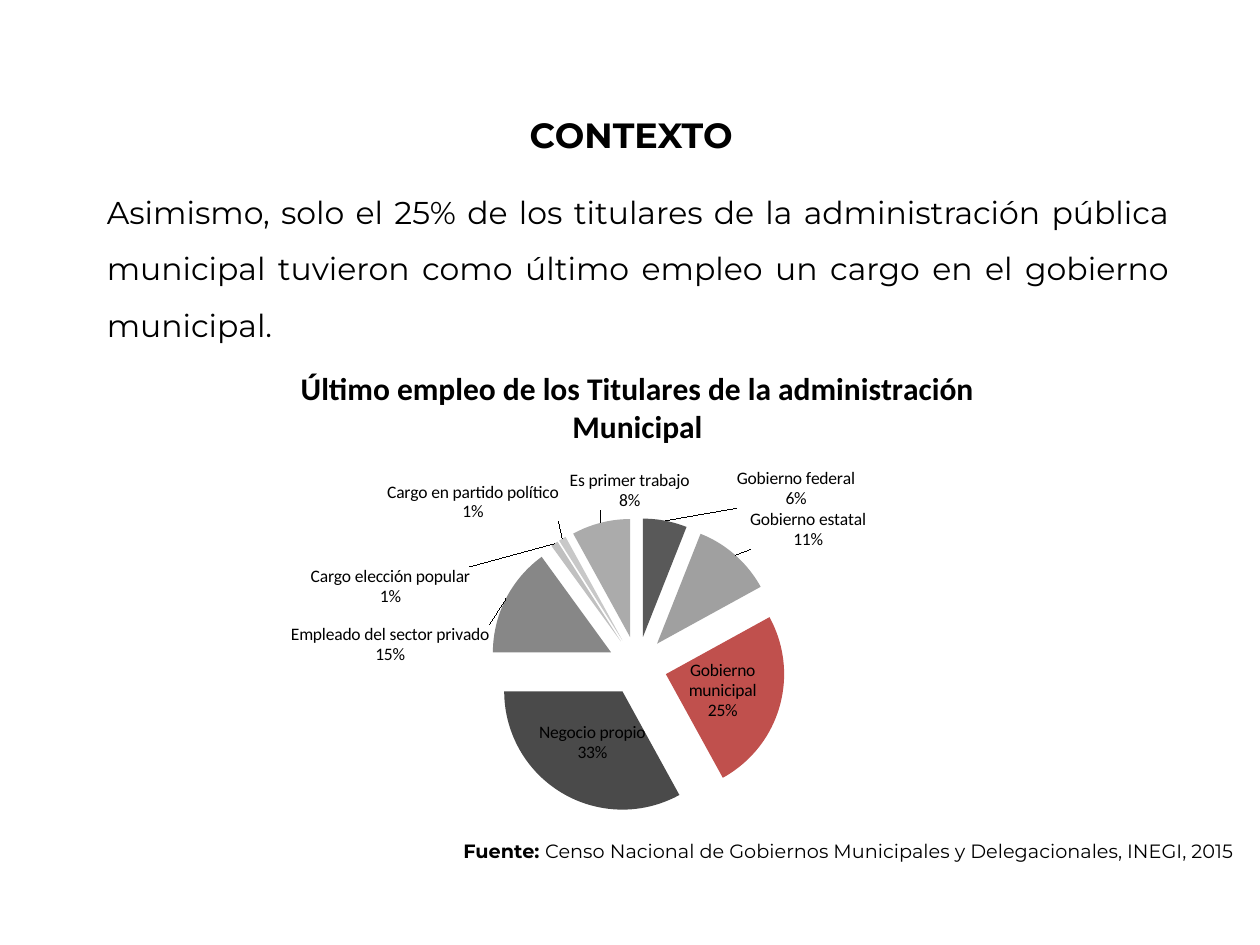
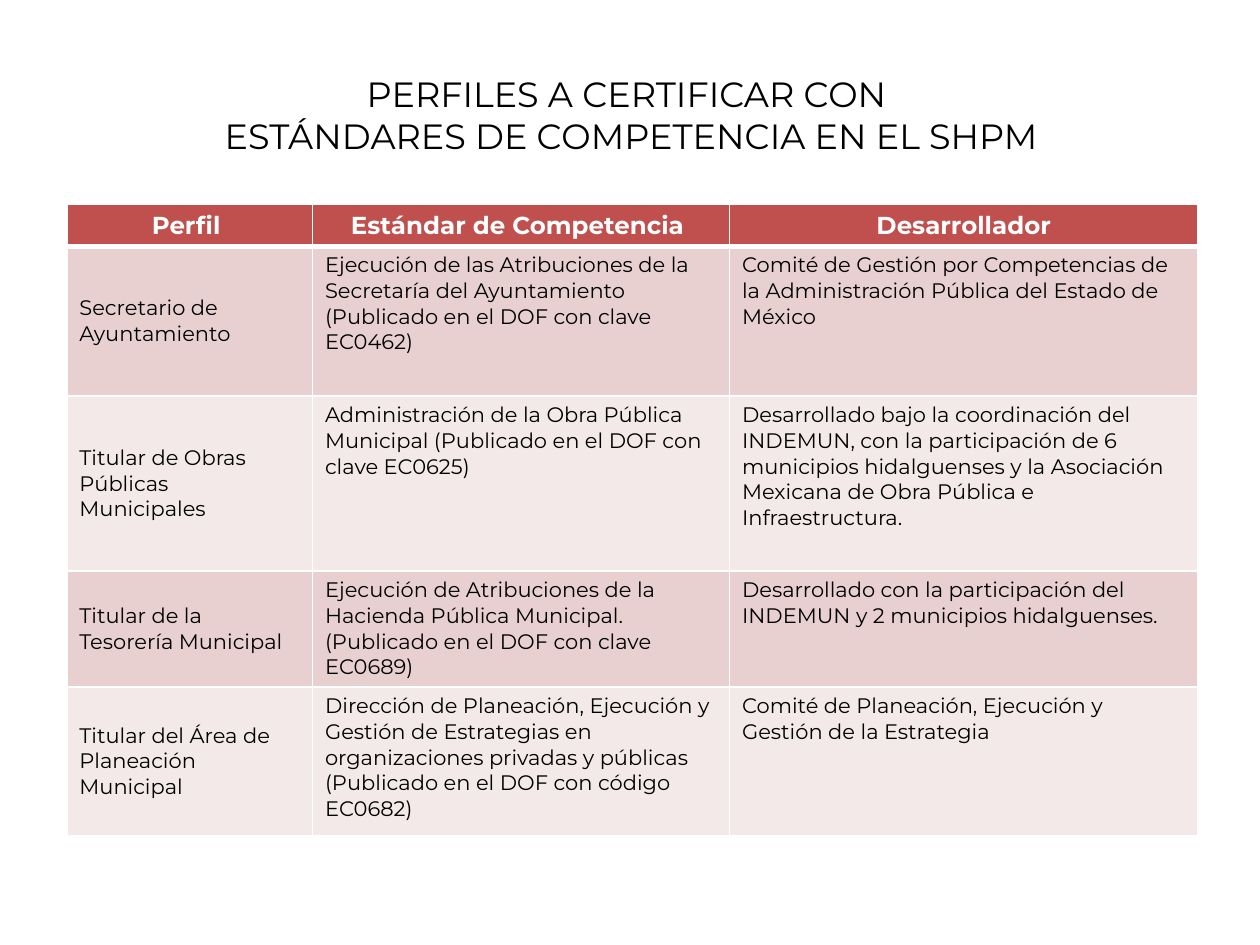
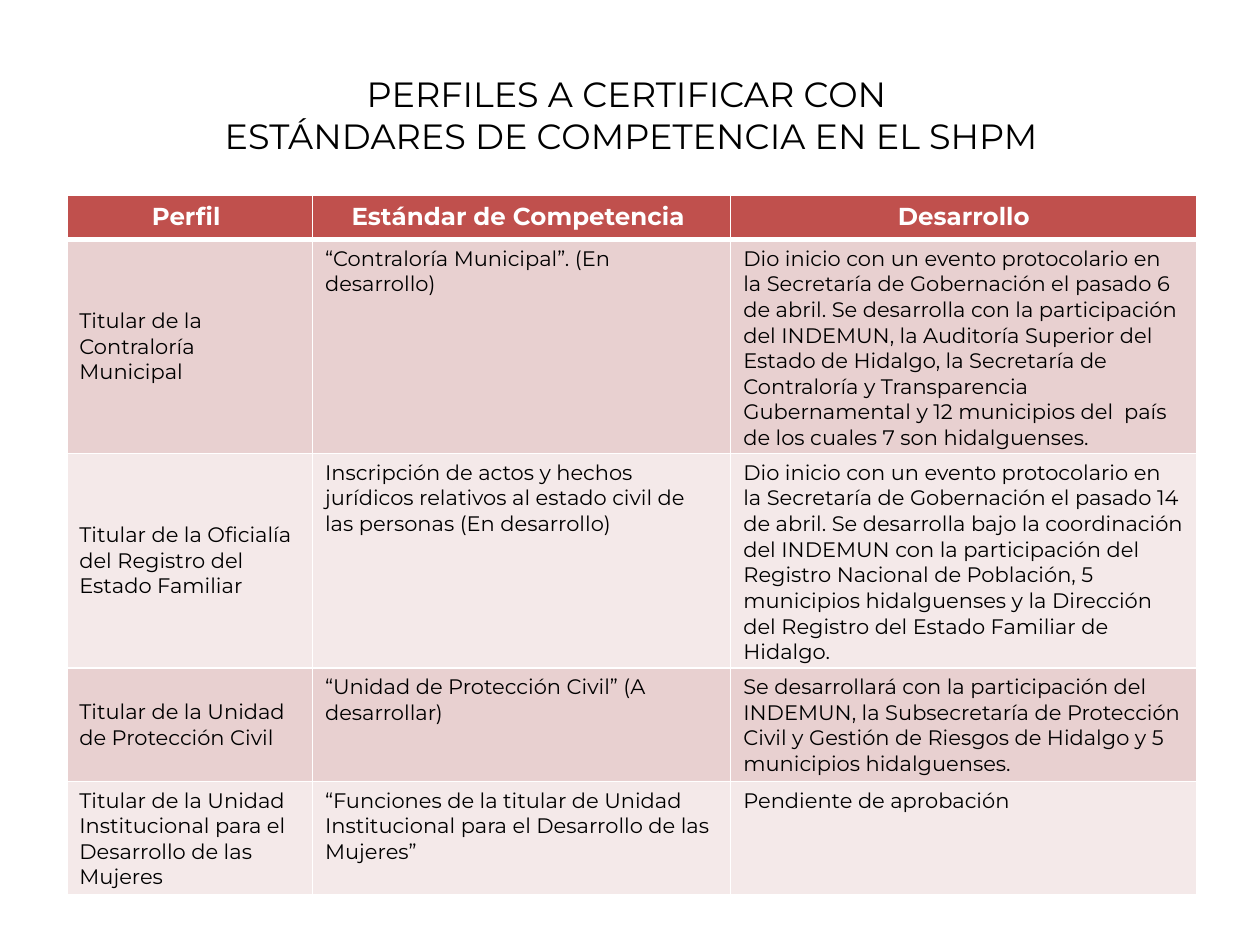
from lxml import etree
from pptx import Presentation
from pptx.chart.data import CategoryChartData
from pptx.dml.color import RGBColor
from pptx.enum import chart as charts, text
from pptx.oxml import parse_xml
from pptx.oxml.ns import nsdecls, qn
from pptx.util import Inches, Pt

INK, RED, WHITE = "000000", "C0504D", "FFFFFF"
BANDS = ["E8D0D0", "F4E9E9"]
LEFT, MID = text.PP_ALIGN.LEFT, text.PP_ALIGN.CENTER


def tint(code):
    return RGBColor.from_string(code)


class Deck:
    face = "Montserrat"

    def __init__(self):
        self.prs = Presentation()
        self.prs.slide_width, self.prs.slide_height = Inches(10), Inches(7.5)

    def page(self):
        self.slide = self.prs.slides.add_slide(self.prs.slide_layouts[6])

    def style(self, font, size, color=INK, bold=False, face=None):
        vals = {"name": face or self.face, "size": Pt(size), "bold": bold}
        for key, val in vals.items():
            setattr(font, key, val)
        font.color.rgb = tint(color)

    def words(self, frame, paras, size, align=LEFT, color=INK, bold=False, space=None):
        for i, runs in enumerate(paras):
            para = frame.paragraphs[0] if i == 0 else frame.add_paragraph()
            para.alignment = align
            if space:
                para.line_spacing = space
            for part, heavy in runs:
                run = para.add_run()
                run.text = part
                self.style(run.font, size, color, bold or heavy)

    def box(self, place, paras, size, wrap=True, **look):
        frame = self.slide.shapes.add_textbox(*map(Inches, place)).text_frame
        frame.word_wrap = wrap
        frame.auto_size = text.MSO_AUTO_SIZE.SHAPE_TO_FIT_TEXT
        self.words(frame, paras, size, **look)

    def edge(self, cell, head, below):
        props = cell._tc.get_or_add_tcPr()
        wide = {"L": 1, "R": 1, "T": 3 if below else 1, "B": 3 if head else 1}
        for side, width in wide.items():
            line = etree.SubElement(props, qn(f"a:ln{side}"), w=str(Pt(width)))
            fill = etree.SubElement(line, qn("a:solidFill"))
            etree.SubElement(fill, qn("a:srgbClr"), val=WHITE)

    def table(self, top, cols, rows, cells):
        place = map(Inches, (0.53, top, sum(cols), sum(rows)))
        grid = self.slide.shapes.add_table(len(rows), len(cols), *place).table
        for col, width in zip(grid.columns, cols):
            col.width = Inches(width)
        for r, (height, line) in enumerate(zip(rows, cells)):
            grid.rows[r].height = Inches(height)
            head = r == 0
            for c, part in enumerate(line):
                cell = grid.cell(r, c)
                self.edge(cell, head, r == 1)
                cell.fill.solid()
                cell.fill.fore_color.rgb = tint(RED if head else BANDS[(r - 1) % 2])
                if c == 0 and not head:
                    cell.vertical_anchor = text.MSO_ANCHOR.MIDDLE
                self.words(cell.text_frame, [[(part, False)]], 14 if head else 12,
                           MID if head else LEFT, WHITE if head else INK, head)

    def pie(self, place, title, parts):
        data = CategoryChartData(number_format="0")
        data.categories = [part[0] for part in parts]
        data.add_series("Series 1", [part[1] for part in parts])
        kind = charts.XL_CHART_TYPE.PIE
        chart = self.slide.shapes.add_chart(kind, *map(Inches, place), data).chart
        self.style(chart.font, 10, face="Calibri")
        chart.has_legend = False
        chart.has_title = True
        frame = chart.chart_title.text_frame
        frame.text = title
        self.style(frame.paragraphs[0].runs[0].font, 18, bold=True, face="Calibri")
        plot = chart.plots[0]
        plot.vary_by_categories = True
        series = plot.series[0]
        for i, part in enumerate(parts):
            fill = series.points[i].format.fill
            fill.solid()
            fill.fore_color.rgb = tint(part[2])
        node = series._element
        blast = etree.Element(qn("c:explosion"), val="25")
        node.find(qn("c:dPt")).addprevious(blast)
        node.find(qn("c:cat")).addprevious(self.labels(parts))
        self.frame(chart)

    def labels(self, parts):
        show = "".join(f'<c:show{key} val="{val}"/>' for key, val in {
            "LegendKey": 0, "Val": 0, "CatName": 1, "SerName": 0,
            "Percent": 1, "BubbleSize": 0}.items())
        show += "<c:separator>\n</c:separator>"
        tags = ""
        for i, part in enumerate(parts):
            move, spot = "", "ctr"
            if part[3]:
                x, y = part[3]
                move = ('<c:layout><c:manualLayout>'
                        f'<c:x val="{x}"/><c:y val="{y}"/>'
                        '</c:manualLayout></c:layout>')
                spot = "outEnd"
            tags += (f'<c:dLbl><c:idx val="{i}"/>{move}'
                     f'<c:dLblPos val="{spot}"/>{show}</c:dLbl>')
        return parse_xml(f'<c:dLbls {nsdecls("c")}>{tags}<c:dLblPos val="outEnd"/>'
                         f'{show}<c:showLeaderLines val="1"/></c:dLbls>')

    def frame(self, chart):
        area = chart._chartSpace.find(".//" + qn("c:plotArea"))
        old = area.find(qn("c:layout"))
        if old is not None:
            area.remove(old)
        vals = {"layoutTarget": "inner", "xMode": "edge", "yMode": "edge",
                "x": 0.35, "y": 0.33, "w": 0.3, "h": 0.56}
        tags = "".join(f'<c:{key} val="{val}"/>' for key, val in vals.items())
        area.insert(0, parse_xml(f'<c:layout {nsdecls("c")}><c:manualLayout>{tags}'
                                 '</c:manualLayout></c:layout>'))

    def profiles(self, top, cols, rows, cells):
        self.page()
        self.box((1.61, 0.53, 6.8, 0.77),
                 [[("PERFILES A CERTIFICAR CON ", False)],
                  [("ESTÁNDARES DE COMPETENCIA EN EL SHPM", False)]],
                 20, wrap=False, align=MID)
        self.table(top, cols, rows, cells)


JOBS = [
    ("Gobierno federal", 6, "595959", (0.07, -0.01)),
    ("Gobierno estatal", 11, "A0A0A0", (0.01, 0)),
    ("Gobierno municipal", 25, RED, None),
    ("Negocio propio", 33, "4A4A4A", None),
    ("Empleado del sector privado", 15, "878787", (-0.01, 0.13)),
    ("Cargo elección popular", 1, "C0C0C0", (-0.08, 0.13)),
    ("Representación sindical", 0, "707070", (-0.04, 0.06)),
    ("Cargo en partido político", 1, "C8C8C8", (0, -0.02)),
    ("Es primer trabajo", 8, "ABABAB", (0.09, -0.01)),
    ("Otro", 0, "D0D0D0", (0.08, -0.01)),
]

READY = [
    ("Perfil ", "Estándar de Competencia ", "Desarrollador"),
    ("Secretario de Ayuntamiento",
     "Ejecución de las Atribuciones de la Secretaría del Ayuntamiento  (Publicado en el DOF con clave EC0462)",
     "Comité de Gestión por Competencias de la Administración Pública del Estado de México"),
    ("Titular de Obras Públicas Municipales",
     "Administración de la Obra Pública Municipal (Publicado en el DOF con clave EC0625)",
     "Desarrollado bajo la coordinación del INDEMUN, con la participación de 6 municipios hidalguenses y la Asociación Mexicana de Obra Pública e Infraestructura."),
    ("Titular de la Tesorería Municipal",
     "Ejecución de Atribuciones de la Hacienda Pública Municipal. (Publicado en el DOF con clave EC0689)",
     "Desarrollado con la participación del INDEMUN y 2 municipios hidalguenses."),
    ("Titular del Área de Planeación Municipal",
     "Dirección de Planeación, Ejecución y Gestión de Estrategias en organizaciones privadas y públicas (Publicado en el DOF con código EC0682)",
     "Comité de Planeación, Ejecución y Gestión de la Estrategia"),
]

COMING = [
    ("Perfil ", "Estándar de Competencia ", "Desarrollo"),
    ("Titular de la Contraloría Municipal",
     "“Contraloría Municipal”. (En desarrollo)",
     "Dio inicio con un evento protocolario en la Secretaría de Gobernación el pasado 6 de abril. Se desarrolla con la participación del INDEMUN, la Auditoría Superior del Estado de Hidalgo, la Secretaría de Contraloría y Transparencia Gubernamental y 12 municipios del  país de los cuales 7 son hidalguenses."),
    ("Titular de la Oficialía del Registro del Estado Familiar",
     "Inscripción de actos y hechos jurídicos relativos al estado civil de las personas (En desarrollo)",
     "Dio inicio con un evento protocolario en la Secretaría de Gobernación el pasado 14 de abril. Se desarrolla bajo la coordinación del INDEMUN con la participación del Registro Nacional de Población, 5 municipios hidalguenses y la Dirección del Registro del Estado Familiar de Hidalgo."),
    ("Titular de la Unidad de Protección Civil",
     "“Unidad de Protección Civil” (A desarrollar)",
     "Se desarrollará con la participación del INDEMUN, la Subsecretaría de Protección Civil y Gestión de Riesgos de Hidalgo y 5 municipios hidalguenses."),
    ("Titular de la Unidad Institucional para el Desarrollo de las Mujeres",
     "“Funciones de la titular de Unidad Institucional para el Desarrollo de las Mujeres”",
     "Pendiente de aprobación"),
]


def main():
    deck = Deck()
    deck.page()
    deck.box((0.75, 1.33, 8.63, 1.4),
             [[("Asimismo, solo el 25% de los titulares de la administración pública municipal tuvieron como último empleo un cargo en el gobierno municipal.", False)]],
             18, align=text.PP_ALIGN.JUSTIFY, space=1.5)
    deck.pie((1.07, 2.73, 7.98, 4.19),
             "Último empleo de los Titulares de la administración Municipal", JOBS)
    deck.box((1.08, 0.85, 7.86, 0.44), [[("CONTEXTO", True)]], 20, align=MID)
    deck.box((3.58, 6.61, 6.36, 0.29),
             [[("Fuente: ", True),
               ("Censo Nacional de Gobiernos Municipales y Delegacionales, INEGI, 2015", False)]],
             11, wrap=False)
    deck.profiles(1.62, [1.95, 3.31, 3.72], [0.33, 1.19, 1.39, 0.92, 1.18], READY)
    deck.profiles(1.55, [1.95, 3.32, 3.7], [0.35, 1.7, 1.7, 0.9, 0.9], COMING)
    deck.prs.save("out.pptx")


if __name__ == "__main__":
    main()
